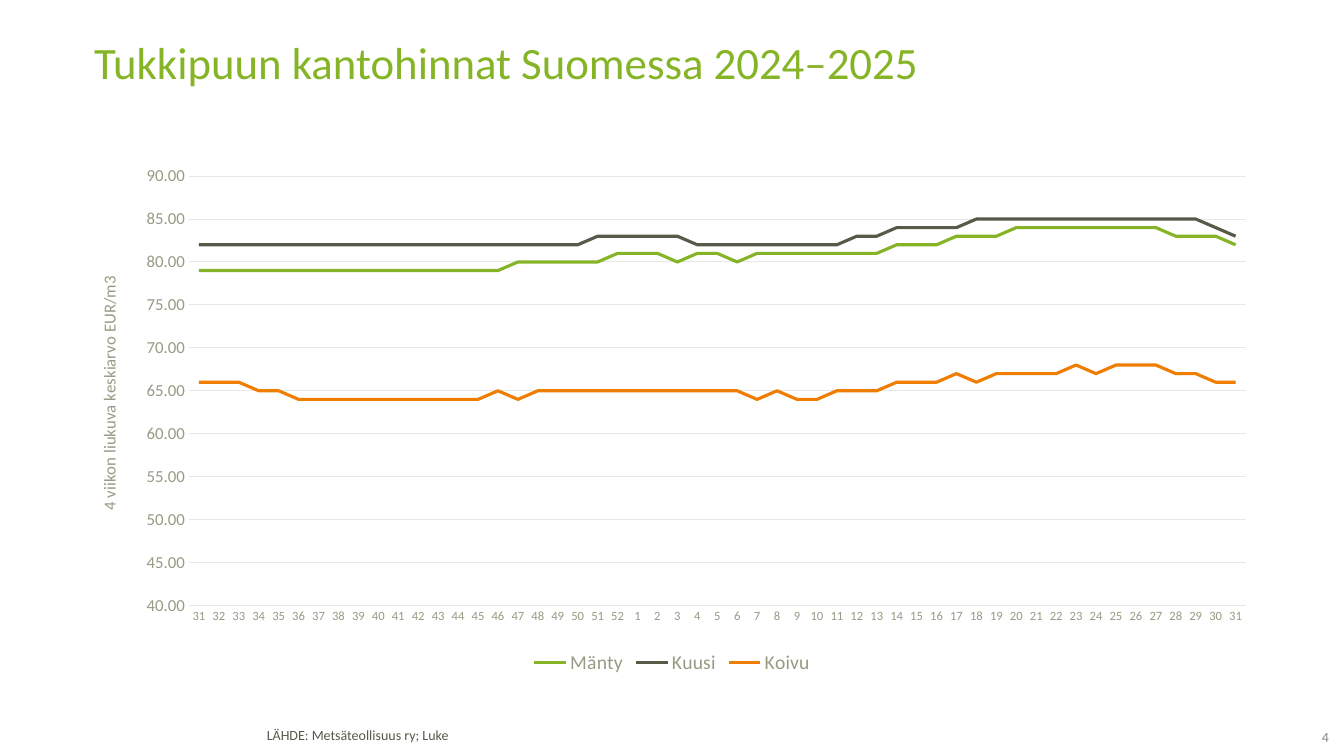
from pptx import Presentation
from pptx import util as u
from pptx.chart.data import CategoryChartData
from pptx.dml.color import RGBColor
from pptx.enum import chart as ch, text as t
from pptx.oxml import parse_xml
from pptx.oxml.ns import nsdecls, qn

COLORS = {"green": "85B526", "dark": "59594A", "orange": "EF7D00",
          "axis": "999984", "grid": "E7E7E3", "source": "58594A", "number": "878787"}
FONT = "Calibri"
WEEKS = [str(week) for week in (*range(31, 53), *range(1, 32))]
PRICES = {
    "Mänty": ("green", [
        79, 79, 79, 79, 79, 79, 79, 79, 79, 79, 79, 79, 79, 79, 79, 79, 80, 80,
        80, 80, 80, 81, 81, 81, 80, 81, 81, 80, 81, 81, 81, 81, 81, 81, 81, 82,
        82, 82, 83, 83, 83, 84, 84, 84, 84, 84, 84, 84, 84, 83, 83, 83, 82]),
    "Kuusi": ("dark", [
        82, 82, 82, 82, 82, 82, 82, 82, 82, 82, 82, 82, 82, 82, 82, 82, 82, 82,
        82, 82, 83, 83, 83, 83, 83, 82, 82, 82, 82, 82, 82, 82, 82, 83, 83, 84,
        84, 84, 84, 85, 85, 85, 85, 85, 85, 85, 85, 85, 85, 85, 85, 84, 83]),
    "Koivu": ("orange", [
        66, 66, 66, 65, 65, 64, 64, 64, 64, 64, 64, 64, 64, 64, 64, 65, 64, 65,
        65, 65, 65, 65, 65, 65, 65, 65, 65, 65, 64, 65, 64, 64, 65, 65, 65, 66,
        66, 66, 67, 66, 67, 67, 67, 67, 68, 67, 68, 68, 68, 67, 67, 66, 66]),
}
TITLE = {"text": "Tukkipuun kantohinnat Suomessa 2024–2025", "at": (84, 40, 1179, 99),
         "size": 32, "color": "green", "para": {"line_spacing": 0.8, "alignment": t.PP_ALIGN.LEFT}}
SOURCE = {"text": "LÄHDE: Metsäteollisuus ry; Luke", "at": (257, 724, 724, 27),
          "size": 10, "color": "source", "para": {"line_spacing": 0.85}}
NUMBER = {"text": "4", "at": (1276, 729, 53, 19), "size": 10, "color": "number",
          "para": {"alignment": t.PP_ALIGN.RIGHT},
          "frame": {"vertical_anchor": t.MSO_ANCHOR.MIDDLE, "margin_left": 0, "margin_right": 0,
                    "margin_top": 0, "margin_bottom": u.Inches(0.04)}}
CHART_AT = (83, 159, 1178, 520)
AXIS_TITLE = "4 viikon liukuva keskiarvo EUR/m3"


def px(length):
    return round(length * 914400 / 100.8)


def set_all(target, values):
    for name, value in values.items():
        setattr(target, name, value)


def style_font(font, size, color):
    set_all(font, {"name": FONT, "size": u.Pt(size), "bold": False})
    font.color.rgb = RGBColor.from_string(COLORS[color])


def style_line(line, color, width):
    line.color.rgb = RGBColor.from_string(COLORS[color])
    line.width = u.Pt(width)


def write(box, item):
    set_all(box, dict(zip(("left", "top", "width", "height"), map(px, item["at"]))))
    frame = box.text_frame
    set_all(frame, {"word_wrap": True, "auto_size": t.MSO_AUTO_SIZE.NONE,
                    "vertical_anchor": t.MSO_ANCHOR.TOP, **item.get("frame", {})})
    para = frame.paragraphs[0]
    set_all(para, item["para"])
    span = para.add_run()
    span.text = item["text"]
    style_font(span.font, item["size"], item["color"])


def pin(parent, index, target="", **places):
    """Give a chart part a manual layout, as fractions of the chart."""
    for old in parent.findall(qn("c:layout")):
        parent.remove(old)
    inner = f'<c:layoutTarget val="{target}"/>' if target else ""
    inner += "".join(f'<c:{side}Mode val="edge"/>' for side in "xy")
    inner += "".join(f'<c:{name} val="{value}"/>' for name, value in places.items())
    parent.insert(index, parse_xml(
        f'<c:layout {nsdecls("c")}><c:manualLayout>{inner}</c:manualLayout></c:layout>'))


def add_price_chart(slide):
    data = CategoryChartData(number_format="#,##0.00")
    data.categories = WEEKS
    for name, (_, values) in PRICES.items():
        data.add_series(name, values)
    chart = slide.shapes.add_chart(ch.XL_CHART_TYPE.LINE, *map(px, CHART_AT), data).chart
    style_font(chart.font, 10, "dark")
    set_all(chart, {"has_title": False, "has_legend": True})
    set_all(chart.legend, {"position": ch.XL_LEGEND_POSITION.BOTTOM, "include_in_layout": False})
    style_font(chart.legend.font, 14, "axis")

    plot = chart.plots[0]
    plot.vary_by_categories = False
    for series, (color, _) in zip(plot.series, PRICES.values()):
        series.smooth = False
        series.marker.style = ch.XL_MARKER_STYLE.NONE
        style_line(series.format.line, color, 2.25)

    weeks, prices = chart.category_axis, chart.value_axis
    for axis, size in ((weeks, 9), (prices, 12)):
        set_all(axis, {"major_tick_mark": ch.XL_TICK_MARK.NONE,
                       "minor_tick_mark": ch.XL_TICK_MARK.NONE})
        style_font(axis.tick_labels.font, size, "axis")
    style_line(weeks.format.line, "grid", 0.75)
    set_all(prices, {"minimum_scale": 40, "maximum_scale": 90, "major_unit": 5,
                     "has_major_gridlines": True})
    set_all(prices.tick_labels, {"number_format": "#,##0.00", "number_format_is_linked": False})
    prices.format.line.fill.background()
    style_line(prices.major_gridlines.format.line, "grid", 0.75)

    span = prices.axis_title.text_frame.paragraphs[0].add_run()
    span.text = AXIS_TITLE
    style_font(span.font, 12, "axis")
    pin(prices.axis_title._element, 1, x=0.01, y=0.22)
    plot_area = chart._chartSpace.chart.plotArea
    pin(plot_area, 0, "inner", x=0.09, y=0.033, w=0.897, h=0.826)


def main():
    deck = Presentation()
    set_all(deck, {"slide_width": px(1344), "slide_height": px(756)})
    slide = deck.slides.add_slide(deck.slide_layouts[5])
    write(slide.shapes.title, TITLE)
    for item in (SOURCE, NUMBER):
        write(slide.shapes.add_textbox(0, 0, 0, 0), item)
    add_price_chart(slide)
    deck.save("out.pptx")


if __name__ == "__main__":
    main()
